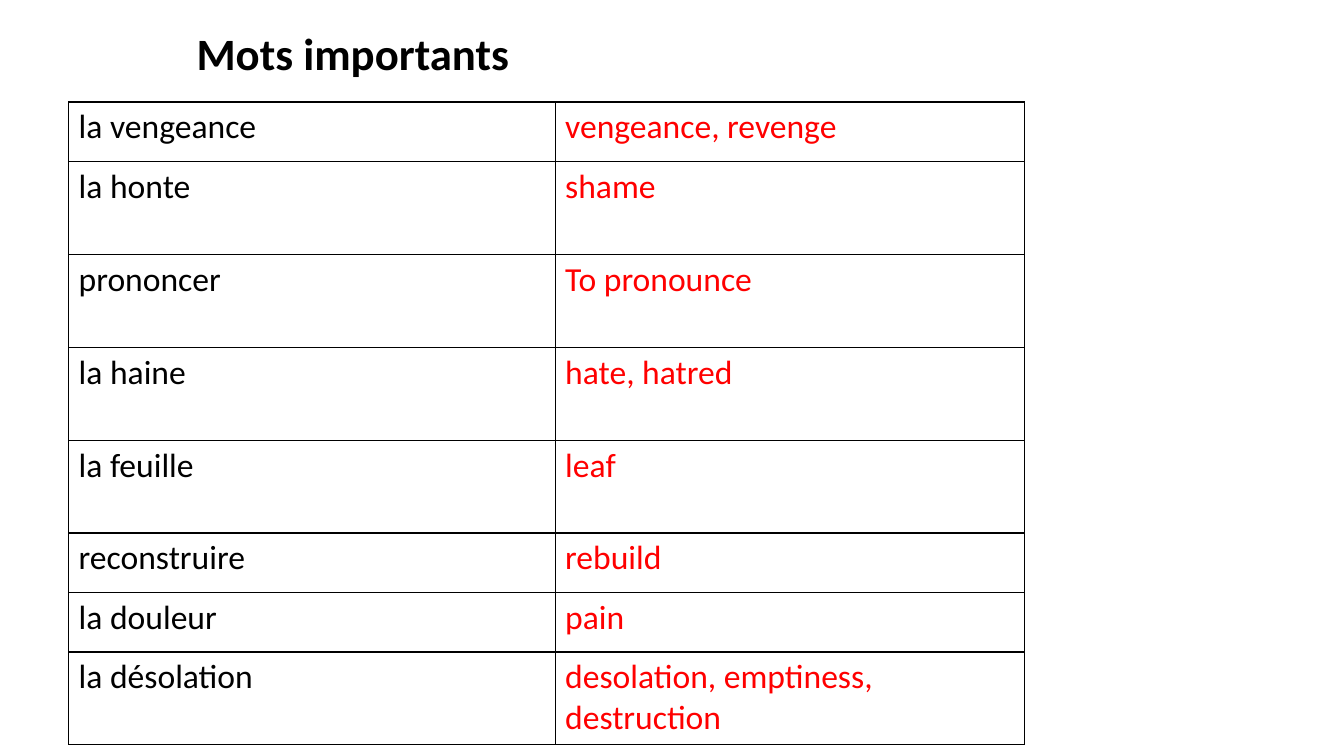
from lxml.etree import SubElement
from pptx import Presentation
from pptx.dml.color import RGBColor
from pptx.enum.text import MSO_ANCHOR, MSO_AUTO_SIZE, PP_ALIGN
from pptx.oxml.ns import qn
from pptx.util import Cm, Pt

COLORS = {"french": "000000", "english": "FF0000", "border": "000000"}
FONT = "Calibri"
SHORT_ROW, TALL_ROW = 1.5, 2.34
COLUMN_WIDTHS = (12.26, 11.82)
VOCABULARY = [
    ("la vengeance", "vengeance, revenge", SHORT_ROW),
    ("la honte", "shame", TALL_ROW),
    ("prononcer", "To pronounce", TALL_ROW),
    ("la haine", "hate, hatred", TALL_ROW),
    ("la feuille", "leaf", TALL_ROW),
    ("reconstruire", "rebuild", SHORT_ROW),
    ("la douleur", "pain", SHORT_ROW),
    ("la désolation", "desolation, emptiness, destruction", TALL_ROW),
]


def set_attributes(target, values):
    """Set each named attribute of the target."""
    for name, value in values.items():
        setattr(target, name, value)


def write_text(text_frame, text, color, size, bold=False):
    """Write one left-aligned, formatted run."""
    paragraph = text_frame.paragraphs[0]
    paragraph.alignment = PP_ALIGN.LEFT
    run = paragraph.add_run()
    run.text = text
    set_attributes(run.font, {"name": FONT, "size": Pt(size), "bold": bold})
    run.font.color.rgb = RGBColor.from_string(COLORS[color])


def add_borders(cell):
    """Draw a thin line on all four sides of a cell."""
    properties = cell._tc.get_or_add_tcPr()
    for side in ("a:lnL", "a:lnR", "a:lnT", "a:lnB"):
        line = SubElement(properties, qn(side), w=str(Pt(1)))
        fill = SubElement(line, qn("a:solidFill"))
        SubElement(fill, qn("a:srgbClr"), val=COLORS["border"])


def add_title(slide, text):
    """Place and format the slide title."""
    title = slide.shapes.title
    set_attributes(title, {"left": Cm(4.7), "top": Cm(0.53),
                           "width": Cm(24.84), "height": Cm(1.62)})
    set_attributes(title.text_frame, {"word_wrap": True,
                                      "auto_size": MSO_AUTO_SIZE.SHAPE_TO_FIT_TEXT,
                                      "vertical_anchor": MSO_ANCHOR.TOP})
    write_text(title.text_frame, text, "french", 32, bold=True)


def add_vocabulary_table(slide):
    """Add the French and English word table."""
    total_height = sum(height for _, _, height in VOCABULARY)
    table = slide.shapes.add_table(
        len(VOCABULARY), len(COLUMN_WIDTHS), Cm(1.73), Cm(2.57),
        Cm(sum(COLUMN_WIDTHS)), Cm(total_height)).table
    set_attributes(table, {"first_row": False, "horz_banding": False})
    for column, width in zip(table.columns, COLUMN_WIDTHS):
        column.width = Cm(width)
    for row, (french, english, height) in zip(table.rows, VOCABULARY):
        row.height = Cm(height)
        words = (("french", french), ("english", english))
        for cell, (language, word) in zip(row.cells, words):
            add_borders(cell)
            cell.fill.background()
            write_text(cell.text_frame, word, language, 24)


def main():
    """Build and save the vocabulary slide."""
    presentation = Presentation()
    set_attributes(presentation, {"slide_width": Cm(33.87), "slide_height": Cm(19.05)})
    slide = presentation.slides.add_slide(presentation.slide_layouts[5])
    add_vocabulary_table(slide)
    add_title(slide, "Mots importants")
    presentation.save("out.pptx")


if __name__ == "__main__":
    main()
